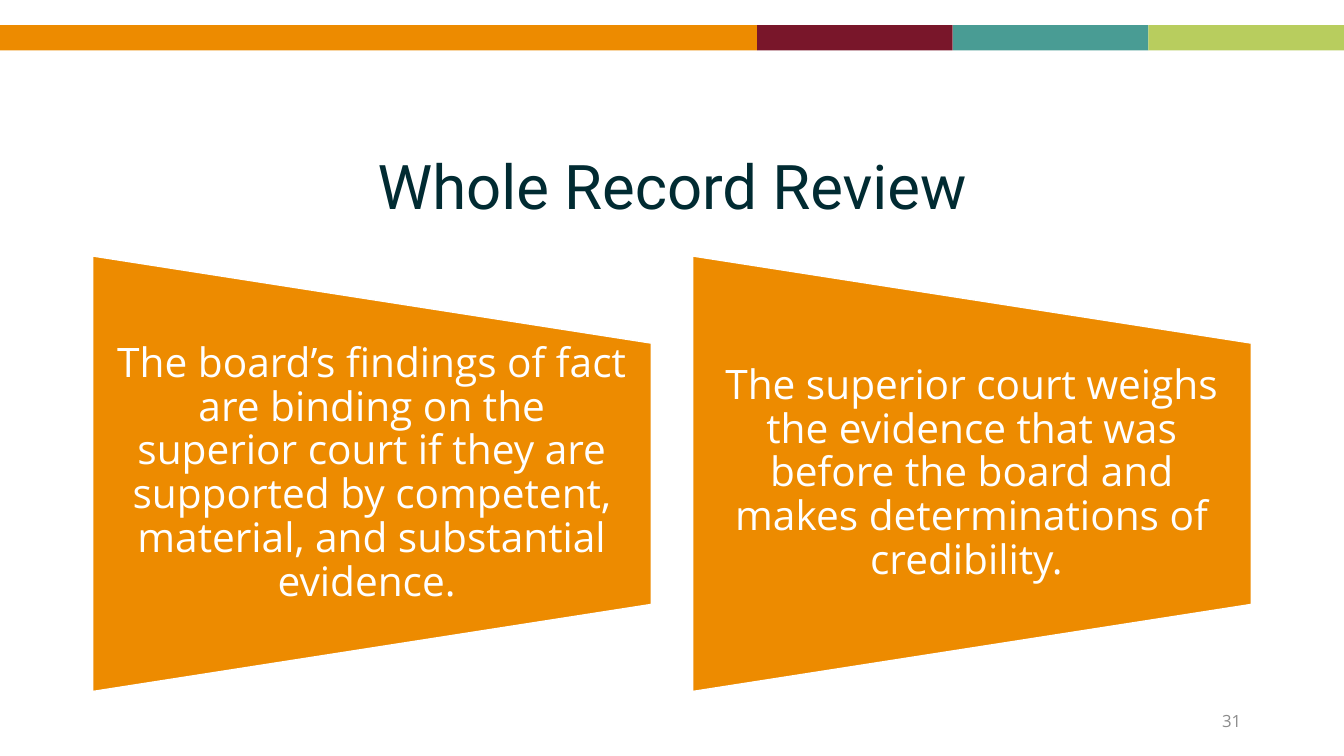
from dataclasses import dataclass

from pptx import Presentation
from pptx.dml.color import RGBColor
from pptx.enum.shapes import MSO_SHAPE
from pptx.enum.text import MSO_ANCHOR, PP_ALIGN
from pptx.util import Inches, Pt

RECT = MSO_SHAPE.RECTANGLE
TRAPEZOID = MSO_SHAPE.FLOWCHART_MANUAL_OPERATION
MIDDLE = MSO_ANCHOR.MIDDLE
CENTER, RIGHT = PP_ALIGN.CENTER, PP_ALIGN.RIGHT


@dataclass(frozen=True)
class Theme:
    orange: str = "ED8B00"
    maroon: str = "79162A"
    teal: str = "499C94"
    lime: str = "B8CD5E"
    ink: str = "012B32"
    white: str = "FFFFFF"
    grey: str = "8C8C8C"
    heading_font: str = "Roboto"
    body_font: str = "Open Sans"
    title_size: int = 44
    panel_size: int = 29
    number_size: int = 12


class SlideBuilder:
    def __init__(self, s, theme):
        self.s = s
        self.theme = theme

    def shape(self, kind, x, y, w, h, fill, line=None, rotation=0):
        sp = self.s.shapes.add_shape(kind, Inches(x), Inches(y), Inches(w), Inches(h))
        sp.shadow.inherit = False
        sp.rotation = rotation
        sp.fill.solid()
        sp.fill.fore_color.rgb = RGBColor.from_string(fill)
        if line:
            sp.line.color.rgb = RGBColor.from_string(line)
            sp.line.width = Pt(1)
        else:
            sp.line.fill.background()

    def text(self, text, x, y, w, h, size, font, color, align=CENTER,
             spacing=None, insets=(0.1, 0.05)):
        """Insets are the side margin and the top and bottom margin."""
        sp = self.s.shapes.add_textbox(Inches(x), Inches(y), Inches(w), Inches(h))
        tf = sp.text_frame
        tf.word_wrap = True
        tf.vertical_anchor = MIDDLE
        tf.margin_left = tf.margin_right = Inches(insets[0])
        tf.margin_top = tf.margin_bottom = Inches(insets[1])
        p = tf.paragraphs[0]
        p.text = text
        p.alignment = align
        p.line_spacing = spacing
        p.font.size = Pt(size)
        p.font.name = font
        p.font.color.rgb = RGBColor.from_string(color)

    def color_band(self, segments):
        """Draw (width, colour) segments side by side along the top."""
        x = 0
        for width, color in segments:
            self.shape(RECT, x, 0.25, width, 0.25, color)
            x += width

    def title(self, text):
        t = self.theme
        self.text(text, 0.92, 1.16, 11.5, 1.45, t.title_size, t.heading_font,
                  t.ink, spacing=0.9)

    def panel(self, text, x, y=2.54, w=5.54, h=4.32):
        """Draw a trapezoid narrowing to the right, with text in its middle."""
        t = self.theme
        # The preset narrows downwards, so it is turned about its centre.
        self.shape(TRAPEZOID, x + (w - h) / 2, y + (h - w) / 2, h, w,
                   t.orange, t.white, rotation=270)
        self.text(text, x, y + h / 5, w, h * 3 / 5, t.panel_size, t.body_font,
                  t.white, spacing=0.9, insets=(0.22, 0))

    def slide_number(self, number):
        t = self.theme
        self.text(number, 9.41, 6.95, 3, 0.4, t.number_size, t.body_font,
                  t.grey, align=RIGHT)


def main():
    prs = Presentation()
    prs.slide_width, prs.slide_height = Inches(13.33), Inches(7.5)
    theme = Theme()
    slide = SlideBuilder(prs.slides.add_slide(prs.slide_layouts[6]), theme)

    slide.color_band([(7.51, theme.orange), (1.94, theme.maroon),
                      (1.94, theme.teal), (1.94, theme.lime)])
    slide.title("Whole Record Review")
    panels = [
        "The board’s findings of fact are binding on the superior court if they "
        "are supported by competent, material, and substantial evidence. ",
        "The superior court weighs the evidence that was before the board and "
        "makes determinations of credibility. ",
    ]
    for i, text in enumerate(panels):
        slide.panel(text, 0.92 + i * 5.95)
    slide.slide_number("31")
    prs.save("out.pptx")


if __name__ == "__main__":
    main()
